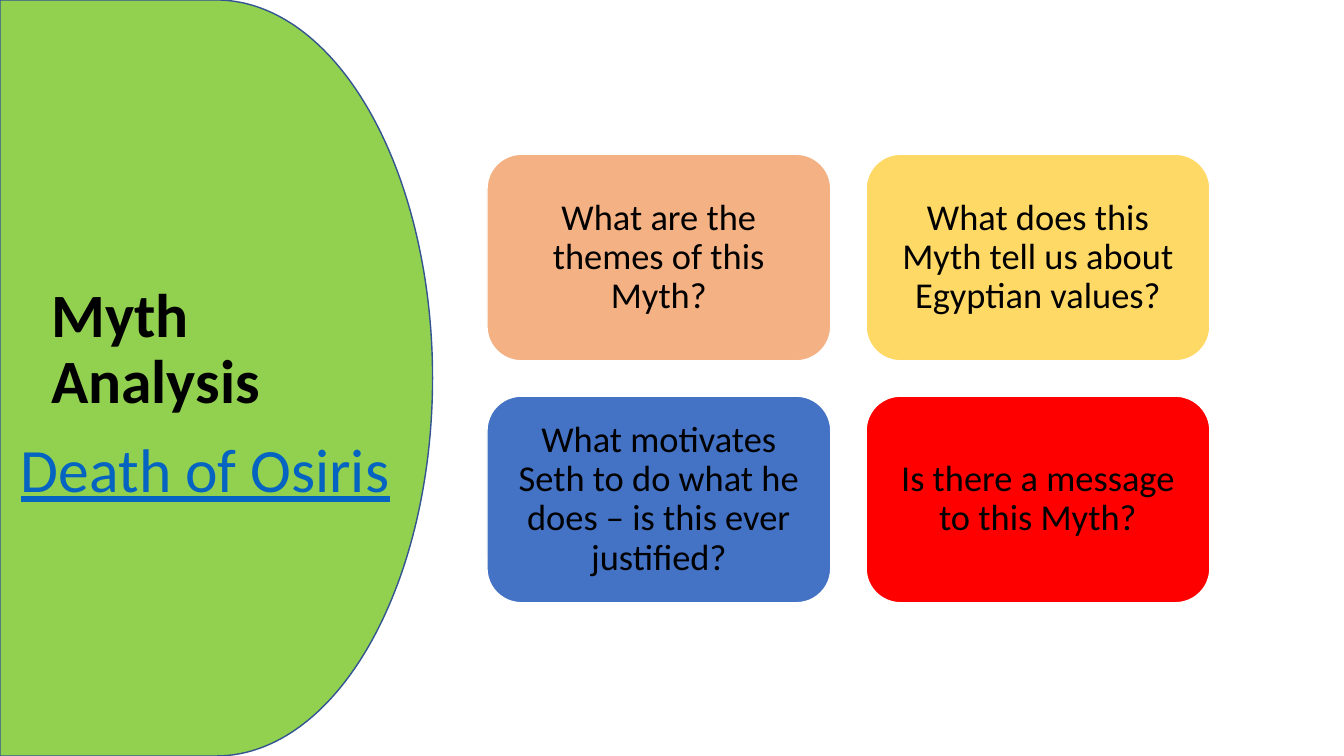
"""Build the Myth Analysis slide with four question cards."""
from pptx import Presentation
from pptx.dml.color import RGBColor
from pptx.enum.shapes import MSO_SHAPE
from pptx.enum.text import MSO_ANCHOR, PP_ALIGN
from pptx.util import Inches, Pt

TITLE = "Myth Analysis"
MYTH = "Death of Osiris"
CARDS = [
    ("What are the themes of this Myth?", "F4B183"),
    ("What does this Myth tell us about Egyptian values?", "FFD966"),
    ("What motivates Seth to do what he does – is this ever justified?", "4472C4"),
    ("Is there a message to this Myth?", "FF0000"),
]
COLUMNS = 2
CARD_LEFT, CARD_TOP = 4.83, 1.53
CARD_WIDTH, CARD_HEIGHT = 3.41, 2.05
GAP = 0.35


def color(value):
    return RGBColor.from_string(value)


def write(box, text, size=44, ink="000000", bold=False, underline=False,
          align=PP_ALIGN.LEFT, anchor=MSO_ANCHOR.MIDDLE, inset=(0.1, 0.05)):
    frame = box.text_frame
    frame.word_wrap = True
    frame.vertical_anchor = anchor
    frame.margin_left = frame.margin_right = Inches(inset[0])
    frame.margin_top = frame.margin_bottom = Inches(inset[1])
    para = frame.paragraphs[0]
    para.alignment = align
    para.line_spacing = 0.9
    span = para.add_run()
    span.text = text
    font = span.font
    font.name, font.size = "Calibri", Pt(size)
    font.bold, font.underline = bold, underline
    font.color.rgb = color(ink)


def add_panel(page, preset, place, fill, line):
    panel = page.shapes.add_shape(preset, *map(Inches, place))
    panel.shadow.inherit = False
    panel.fill.solid()
    panel.fill.fore_color.rgb = color(fill)
    panel.line.color.rgb = color(line)
    panel.line.width = Pt(1)
    return panel


def add_text(page, place, text, **style):
    write(page.shapes.add_textbox(*map(Inches, place)), text, **style)


def main():
    deck = Presentation()
    deck.slide_width, deck.slide_height = Inches(13.33), Inches(7.5)
    page = deck.slides.add_slide(deck.slide_layouts[6])

    add_panel(page, MSO_SHAPE.FLOWCHART_DELAY, (0, 0, 4.29, 7.5), "92D050", "325491")
    add_text(page, (0.41, 2.75, 3.03, 1.45), TITLE, bold=True)

    for index, (question, fill) in enumerate(CARDS):
        row, column = divmod(index, COLUMNS)
        left = CARD_LEFT + column * (CARD_WIDTH + GAP)
        top = CARD_TOP + row * (CARD_HEIGHT + GAP)
        card = add_panel(page, MSO_SHAPE.ROUNDED_RECTANGLE,
                         (left, top, CARD_WIDTH, CARD_HEIGHT), fill, "FFFFFF")
        write(card, question, size=26, align=PP_ALIGN.CENTER, inset=(0.11, 0.11))

    add_text(page, (0.11, 4.31, 4.34, 1.26), MYTH, ink="0563C1",
             underline=True, anchor=MSO_ANCHOR.TOP)
    deck.save("out.pptx")


if __name__ == "__main__":
    main()
